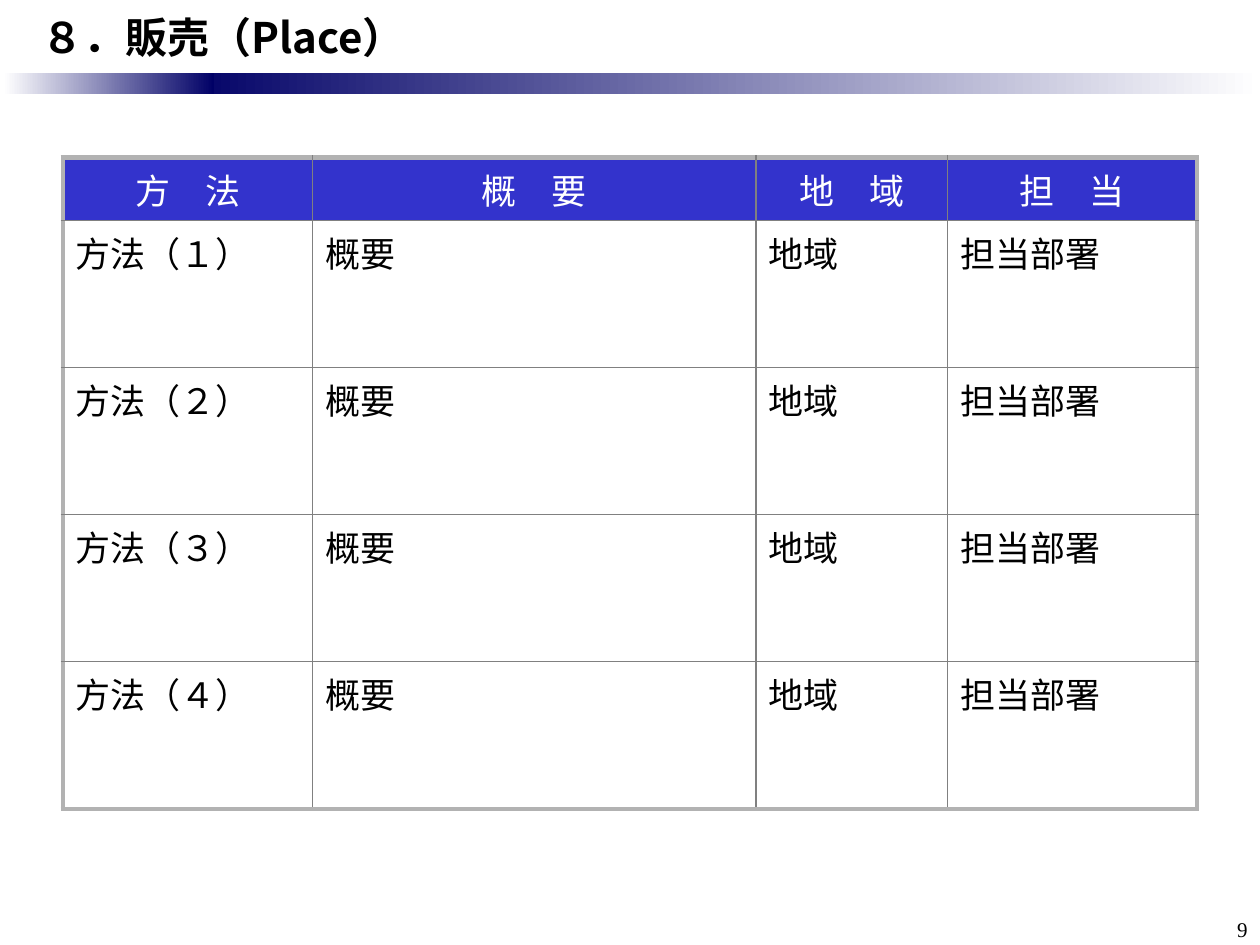
"""Build the sales channel (Place) slide with its table of methods."""
from dataclasses import dataclass

from lxml.etree import SubElement
from pptx import Presentation
from pptx.dml.color import RGBColor
from pptx.enum.shapes import MSO_SHAPE
from pptx.enum.text import MSO_ANCHOR, PP_ALIGN
from pptx.oxml.ns import qn
from pptx.util import Inches, Pt

TITLE = "８．販売（Place）"
PAGE_NUMBER = "9"
HEADINGS = ["方　法", "概　要", "地　域", "担　当"]
METHODS = [[f"方法（{number}）", "概要", "地域", "担当部署"] for number in "１２３４"]


@dataclass(frozen=True)
class Theme:
    navy: str = "000066"
    white: str = "FFFFFF"
    black: str = "000000"
    heading: str = "3333CC"
    frame: str = "B2B2B2"
    grid: str = "808080"
    gothic: str = "Noto Sans CJK JP"
    roman: str = "Times New Roman"
    title_size: int = 24
    table_size: int = 20
    page_size: int = 12
    frame_width: int = 3
    grid_width: int = 1


THEME = Theme()
WIDTH, HEIGHT = 10, 7.5
BAR_TOP, BAR_HEIGHT = 0.58, 0.17
BARS = [(1.42, WIDTH - 1.42, THEME.navy, THEME.white),
        (0.03, 1.67, THEME.white, THEME.navy)]
TABLE_LEFT, TABLE_TOP, TABLE_WIDTH, TABLE_HEIGHT = 0.5, 1.25, 9, 5.17
COLUMN_SHARES = [0.22, 0.391, 0.169, 0.22]
HEADING_HEIGHT = 0.5


def box(left, top, width, height):
    return [Inches(length) for length in (left, top, width, height)]


def write(paragraph, words, size, latin, color, align=PP_ALIGN.LEFT, bold=False):
    paragraph.text = words
    paragraph.alignment = align
    font = paragraph.font
    font.size, font.name, font.bold = Pt(size), latin, bold
    font.color.rgb = RGBColor.from_string(color)
    SubElement(paragraph._p.pPr.find(qn("a:defRPr")), qn("a:ea"), typeface=THEME.gothic)


def add_bar(slide, left, width, start, end):
    bar = slide.shapes.add_shape(MSO_SHAPE.RECTANGLE, *box(left, BAR_TOP, width, BAR_HEIGHT))
    bar.shadow.inherit = False
    bar.line.fill.background()
    bar.fill.gradient()
    bar.fill.gradient_angle = 0
    for stop, color in zip(bar.fill.gradient_stops, (start, end)):
        stop.color.rgb = RGBColor.from_string(color)


def add_text(slide, place, margins, words, *style, **options):
    frame = slide.shapes.add_textbox(*box(*place)).text_frame
    frame.word_wrap = True
    frame.vertical_anchor = MSO_ANCHOR.MIDDLE
    frame.margin_left, frame.margin_top, frame.margin_right, frame.margin_bottom = box(*margins)
    write(frame.paragraphs[0], words, *style, **options)


def draw_borders(cell, outer_edges):
    properties = cell._tc.get_or_add_tcPr()
    for edge, is_outer in outer_edges.items():
        color, width = ((THEME.frame, THEME.frame_width) if is_outer
                        else (THEME.grid, THEME.grid_width))
        border = SubElement(properties, qn(f"a:ln{edge}"), w=str(Pt(width)))
        SubElement(SubElement(border, qn("a:solidFill")), qn("a:srgbClr"), val=color)


def add_methods_table(slide):
    rows = [HEADINGS, *METHODS]
    last_row, last_column = len(rows) - 1, len(HEADINGS) - 1
    table = slide.shapes.add_table(
        len(rows), len(HEADINGS),
        *box(TABLE_LEFT, TABLE_TOP, TABLE_WIDTH, TABLE_HEIGHT)).table
    table.first_row = table.horz_banding = False
    for column, share in zip(table.columns, COLUMN_SHARES):
        column.width = Inches(TABLE_WIDTH * share)
    method_height = (TABLE_HEIGHT - HEADING_HEIGHT) / len(METHODS)
    for r, row in enumerate(rows):
        is_heading = r == 0
        table.rows[r].height = Inches(HEADING_HEIGHT if is_heading else method_height)
        for c, words in enumerate(row):
            cell = table.cell(r, c)
            draw_borders(cell, {"L": c == 0, "R": c == last_column,
                                "T": is_heading, "B": r == last_row})
            if is_heading:
                cell.fill.solid()
                cell.fill.fore_color.rgb = RGBColor.from_string(THEME.heading)
            else:
                cell.fill.background()
            paragraph = cell.text_frame.paragraphs[0]
            write(paragraph, words, THEME.table_size, THEME.roman,
                  THEME.white if is_heading else THEME.black,
                  PP_ALIGN.CENTER if is_heading else PP_ALIGN.LEFT)
            paragraph.space_before = Pt(THEME.table_size * 0.2)


def main():
    deck = Presentation()
    deck.slide_width, deck.slide_height = Inches(WIDTH), Inches(HEIGHT)
    slide = deck.slides.add_slide(deck.slide_layouts[6])
    for bar in BARS:
        add_bar(slide, *bar)
    add_text(slide, (9.42, 7.25, 0.58, 0.25), (0.1, 0.05, 0.1, 0.05), PAGE_NUMBER,
             THEME.page_size, THEME.roman, THEME.black, align=PP_ALIGN.RIGHT)
    add_text(slide, (0, 0, WIDTH, BAR_TOP), (0.33, 0.05, 0.1, 0.05), TITLE,
             THEME.title_size, THEME.gothic, THEME.black, bold=True)
    add_methods_table(slide)
    deck.save("out.pptx")


if __name__ == "__main__":
    main()
